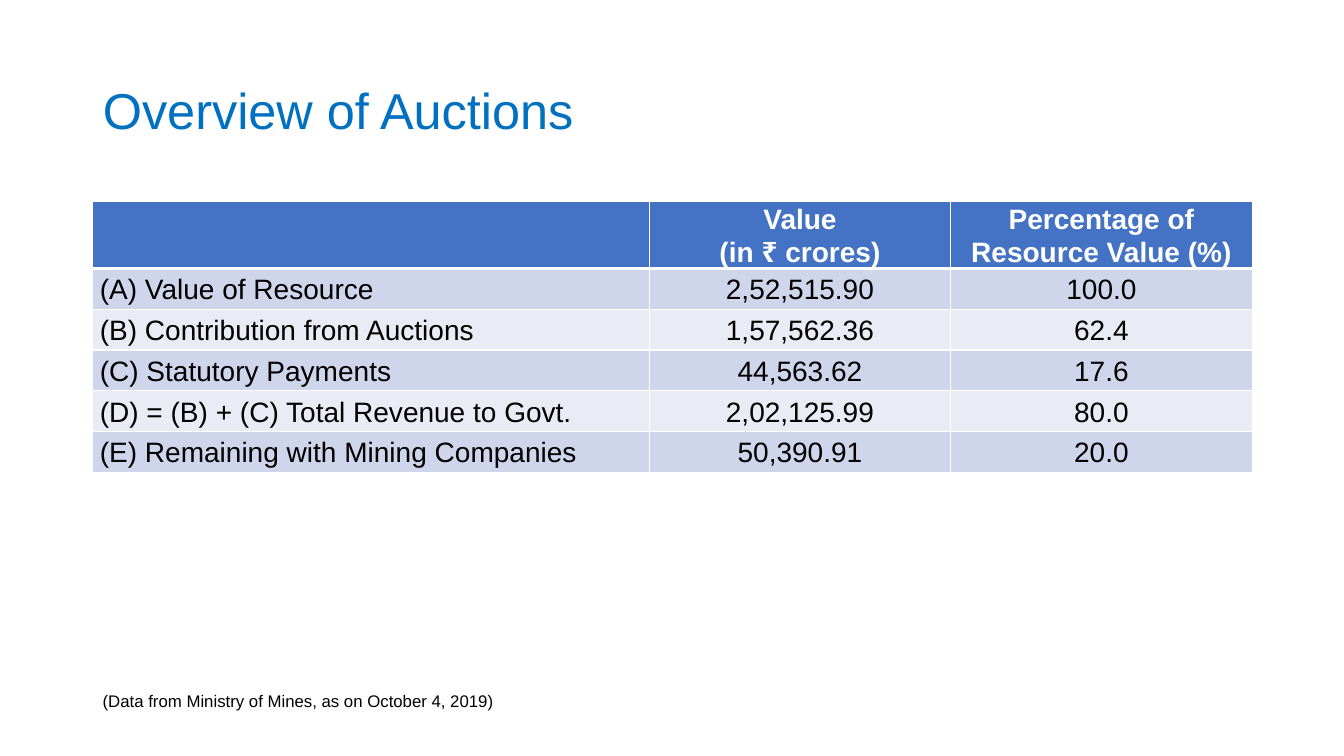
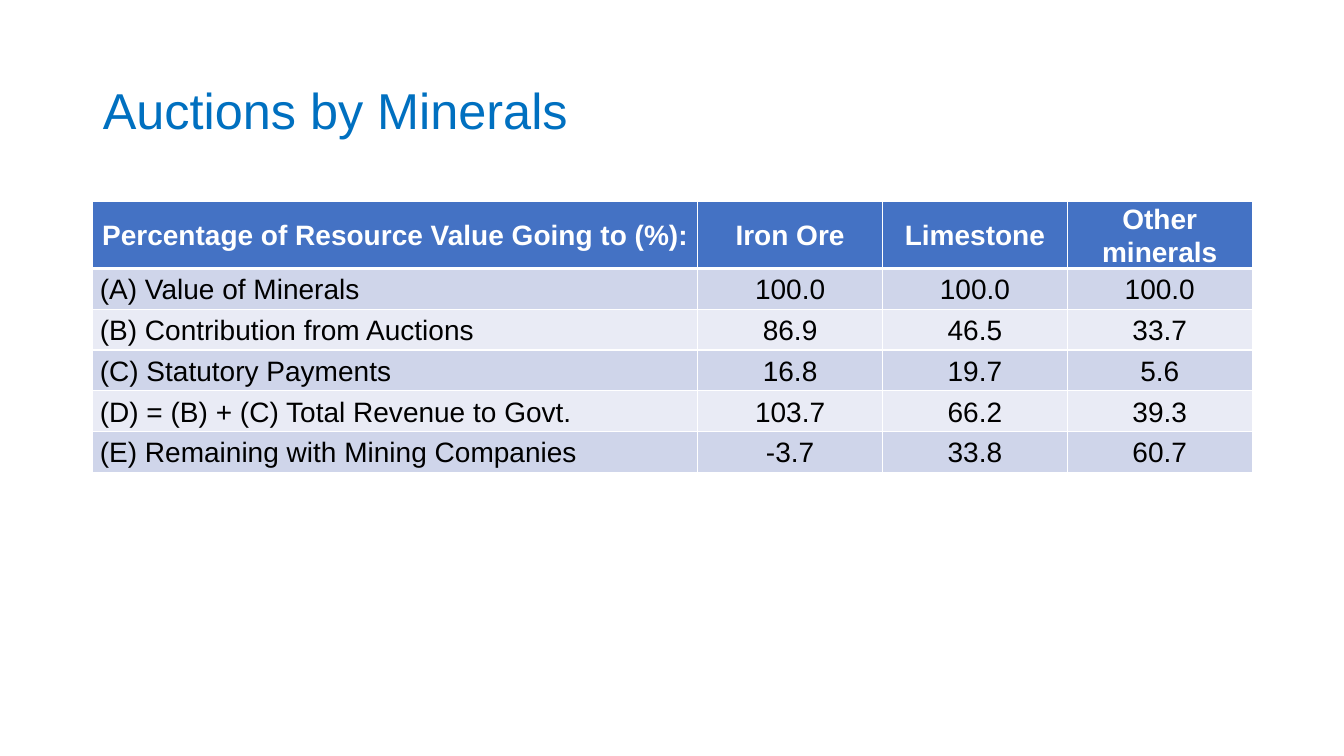
from pptx import Presentation
from pptx.dml.color import RGBColor
from pptx.enum.text import MSO_ANCHOR as Anchor, MSO_AUTO_SIZE as AutoSize, PP_ALIGN as Align
from pptx.oxml.ns import qn
from pptx.util import Inches, Pt
from lxml.etree import SubElement

FONT = "Arial"
TITLE_BLUE = "0070C0"
HEADER_BLUE = "4472C4"
BAND_FILLS = ("CFD5EA", "E9EBF5")
WHITE = "FFFFFF"
BLACK = "000000"
LEFT = 0.92
CONTENT_WIDTH = 11.5
TABLE_TOP = 2
ROWS_HEIGHT = 2.43

OVERVIEW = [
    ["", "Value\n(in ₹ crores)", "Percentage of Resource Value (%)"],
    ["(A) Value of Resource", "2,52,515.90", "100.0"],
    ["(B) Contribution from Auctions", "1,57,562.36", "62.4"],
    ["(C) Statutory Payments", "44,563.62", "17.6"],
    ["(D) = (B) + (C) Total Revenue to Govt.", "2,02,125.99", "80.0"],
    ["(E) Remaining with Mining Companies", "50,390.91", "20.0"],
]
MINERALS = [
    ["Percentage of Resource Value Going to (%):", "Iron Ore", "Limestone", "Other minerals"],
    ["(A) Value of Minerals", "100.0", "100.0", "100.0"],
    ["(B) Contribution from Auctions", "86.9", "46.5", "33.7"],
    ["(C) Statutory Payments", "16.8", "19.7", "5.6"],
    ["(D) = (B) + (C) Total Revenue to Govt.", "103.7", "66.2", "39.3"],
    ["(E) Remaining with Mining Companies", "-3.7", "33.8", "60.7"],
]


def rgb(value):
    return RGBColor.from_string(value)


def add_run(paragraph, text, size, color, bold=False):
    run = paragraph.add_run()
    run.text = text
    run.font.name = FONT
    run.font.size = Pt(size)
    run.font.bold = bold
    run.font.color.rgb = rgb(color)


def add_titled_slide(deck, text):
    slide = deck.slides.add_slide(deck.slide_layouts.get_by_name("Title Only"))
    title = slide.shapes.title
    title.left, title.top = Inches(LEFT), Inches(0.4)
    title.width, title.height = Inches(CONTENT_WIDTH), Inches(1.45)
    title.text_frame.vertical_anchor = Anchor.MIDDLE
    heading = title.text_frame.paragraphs[0]
    heading.alignment = Align.LEFT
    heading.line_spacing = 0.9
    add_run(heading, text, 36, TITLE_BLUE)
    return slide


def set_borders(cell, top, bottom):
    properties = cell._tc.get_or_add_tcPr()
    for side, points in (("L", 1), ("R", 1), ("T", top), ("B", bottom)):
        line = SubElement(properties, qn(f"a:ln{side}"), w=str(Pt(points)))
        fill = SubElement(line, qn("a:solidFill"))
        SubElement(fill, qn("a:srgbClr"), val=WHITE)


def fill_cell(cell, text, row, column):
    is_header = row == 0
    set_borders(cell, top=3 if row == 1 else 1, bottom=3 if is_header else 1)
    cell.fill.solid()
    cell.fill.fore_color.rgb = rgb(HEADER_BLUE if is_header else BAND_FILLS[(row - 1) % 2])
    cell.vertical_anchor = Anchor.MIDDLE
    cell.margin_left = cell.margin_right = Inches(0.07)
    cell.margin_top = cell.margin_bottom = 0
    if not text:
        return
    frame = cell.text_frame
    for index, line in enumerate(text.split("\n")):
        paragraph = frame.add_paragraph() if index else frame.paragraphs[0]
        paragraph.alignment = Align.CENTER if is_header or column else Align.LEFT
        paragraph.line_spacing = 1.07
        add_run(paragraph, line, 20, WHITE if is_header else BLACK, bold=is_header)


def add_data_table(slide, data, label_width):
    value_columns = len(data[0]) - 1
    table = slide.shapes.add_table(
        len(data), value_columns + 1, Inches(LEFT), Inches(TABLE_TOP),
        Inches(CONTENT_WIDTH), Inches(ROWS_HEIGHT)).table
    value_width = (CONTENT_WIDTH - label_width) / value_columns
    for column, width in enumerate([label_width] + [value_width] * value_columns):
        table.columns[column].width = Inches(width)
    for row, texts in enumerate(data):
        table.rows[row].height = Inches(ROWS_HEIGHT / len(data))
        for column, text in enumerate(texts):
            fill_cell(table.cell(row, column), text, row, column)


def add_source_note(slide, text):
    note = slide.shapes.add_textbox(Inches(LEFT), Inches(6.8), Inches(4.12), Inches(0.3))
    note.text_frame.word_wrap = False
    note.text_frame.auto_size = AutoSize.SHAPE_TO_FIT_TEXT
    add_run(note.text_frame.paragraphs[0], text, 12, BLACK)


def main():
    deck = Presentation()
    deck.slide_width, deck.slide_height = Inches(13.33), Inches(7.5)

    overview = add_titled_slide(deck, "Overview of Auctions")
    add_data_table(overview, OVERVIEW, label_width=5.52)
    add_source_note(overview, "(Data from Ministry of Mines, as on October 4, 2019)")

    minerals = add_titled_slide(deck, "Auctions by Minerals")
    add_data_table(minerals, MINERALS, label_width=6)

    deck.save("out.pptx")


if __name__ == "__main__":
    main()
